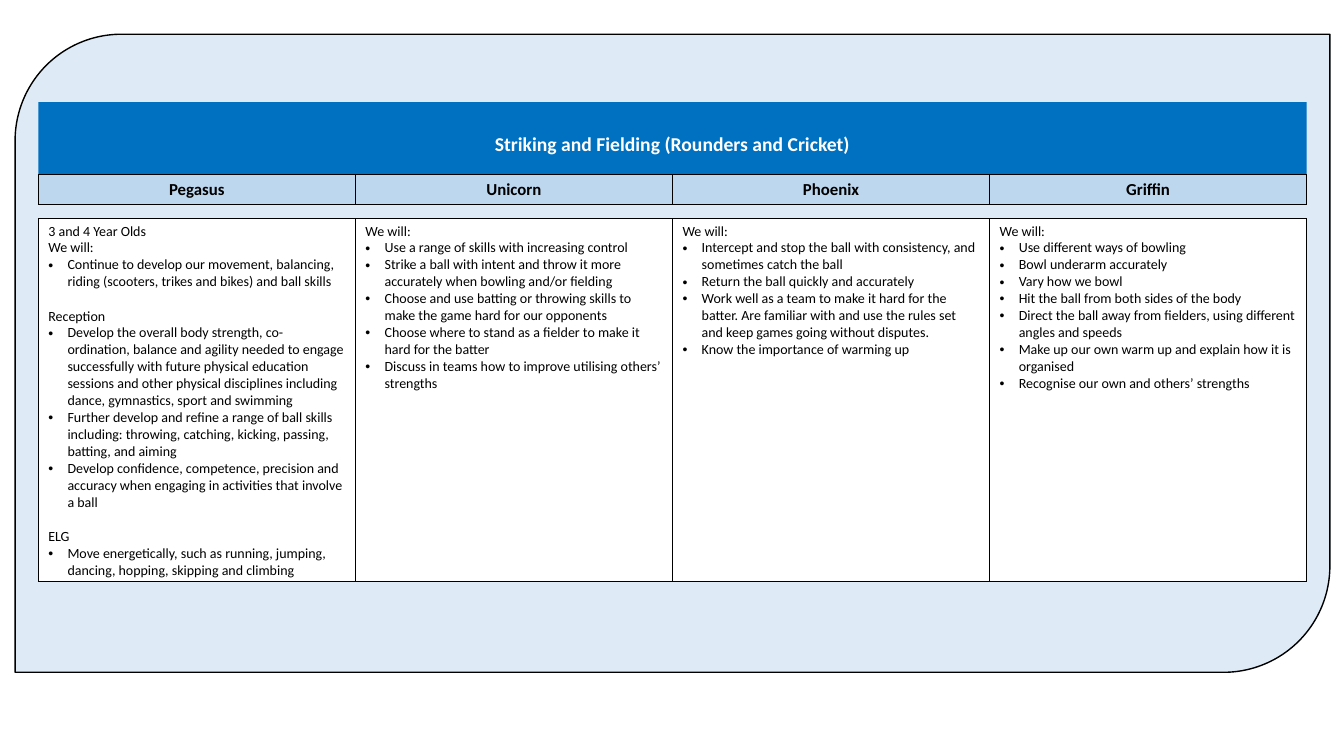
import pptx
import pptx.dml.color
import pptx.enum.shapes
import pptx.enum.text
import pptx.oxml
import pptx.oxml.ns
import pptx.util
from pptx.util import Inches, Pt

RGBColor = pptx.dml.color.RGBColor
BLACK = RGBColor(0x00, 0x00, 0x00)
WHITE = RGBColor(0xFF, 0xFF, 0xFF)
PALE_BLUE = RGBColor(0xDE, 0xEB, 0xF7)
LIGHT_BLUE = RGBColor(0xBD, 0xD7, 0xEE)
STRONG_BLUE = RGBColor(0x00, 0x70, 0xC0)

LEFT, WIDTH = Inches(0.38), Inches(12.58)

CLASSES = ["Pegasus", "Unicorn", "Phoenix", "Griffin"]

# Each class has sections: a list of heading lines and a list of bullets.
SKILLS = [
    [
        (["3 and 4 Year Olds", "We will:"], [
            "Continue to develop our movement, balancing, riding (scooters, trikes and bikes) and ball skills",
        ]),
        (["Reception"], [
            "Develop the overall body strength, co-ordination, balance and agility needed to engage "
            "successfully with future physical education sessions and other physical disciplines "
            "including dance, gymnastics, sport and swimming",
            "Further develop and refine a range of ball skills including: throwing, catching, kicking, "
            "passing, batting, and aiming",
            "Develop confidence, competence, precision and accuracy when engaging in activities that "
            "involve a ball",
        ]),
        (["ELG"], [
            "Move energetically, such as running, jumping, dancing, hopping, skipping and climbing",
        ]),
    ],
    [
        (["We will:"], [
            "Use a range of skills with increasing control",
            "Strike a ball with intent and throw it more accurately when bowling and/or fielding",
            "Choose and use batting or throwing skills to make the game hard for our opponents",
            "Choose where to stand as a fielder to make it hard for the batter",
            "Discuss in teams how to improve utilising others’ strengths",
        ]),
    ],
    [
        (["We will:"], [
            "Intercept and stop the ball with consistency, and sometimes catch the ball",
            "Return the ball quickly and accurately",
            "Work well as a team to make it hard for the batter. Are familiar with and use the rules "
            "set and keep games going without disputes.",
            "Know the importance of warming up",
        ]),
    ],
    [
        (["We will:"], [
            "Use different ways of bowling",
            "Bowl underarm accurately",
            "Vary how we bowl",
            "Hit the ball from both sides of the body",
            "Direct the ball away from fielders, using different angles and speeds",
            "Make up our own warm up and explain how it is organised",
            "Recognise our own and others’ strengths",
        ]),
    ],
]


class SkillsSlide:
    """Holds the slide and the text style its elements share."""

    font_name = "Calibri"
    bullet_indent = Inches(0.19)
    section_gap = Pt(12.2)

    def __init__(self, presentation):
        self.slide = presentation.slides.add_slide(presentation.slide_layouts[5])

    def style(self, paragraph, size, color=BLACK, bold=False, align=None):
        font = paragraph.font
        font.name, font.size, font.bold = self.font_name, Pt(size), bold
        font.color.rgb = color
        paragraph.alignment = align

    def add_panel(self):
        panel = self.slide.shapes.add_shape(
            pptx.enum.shapes.MSO_SHAPE.ROUND_2_DIAG_RECTANGLE,
            Inches(0.15), Inches(0.34), Inches(13.04), Inches(6.33))
        panel.shadow.inherit = False
        panel.fill.solid()
        panel.fill.fore_color.rgb = PALE_BLUE
        panel.line.color.rgb = BLACK
        panel.line.width = Pt(1)
        # The title placeholder has to lie in front of the panel.
        self.slide.shapes.title.element.addprevious(panel.element)

    def add_title(self, text):
        title = self.slide.shapes.title
        title.left, title.top, title.width, title.height = LEFT, Inches(1.26), WIDTH, Inches(0.34)
        title.fill.solid()
        title.fill.fore_color.rgb = STRONG_BLUE
        frame = title.text_frame
        frame.text = text
        frame.word_wrap = True
        frame.auto_size = pptx.enum.text.MSO_AUTO_SIZE.SHAPE_TO_FIT_TEXT
        self.style(frame.paragraphs[0], 14, WHITE, True, pptx.enum.text.PP_ALIGN.CENTER)

    def add_row(self, top, height, fill):
        """Add a one-row bordered table and return its cells."""
        table = self.slide.shapes.add_table(1, len(CLASSES), LEFT, top, WIDTH, height).table
        table.first_row = table.horz_banding = False
        cells = list(table.iter_cells())
        for cell in cells:
            self.add_borders(cell)
            cell.fill.solid()
            cell.fill.fore_color.rgb = fill
        return cells

    def add_borders(self, cell):
        properties = cell._tc.get_or_add_tcPr()
        for side in "LRTB":
            properties.append(pptx.oxml.parse_xml(
                f'<a:ln{side} {pptx.oxml.ns.nsdecls("a")} w="{Pt(0.5)}"><a:solidFill>'
                f'<a:srgbClr val="{BLACK}"/></a:solidFill></a:ln{side}>'))

    def add_class_names(self):
        for cell, name in zip(self.add_row(Inches(1.73), Inches(0.3), LIGHT_BLUE), CLASSES):
            cell.text = name
            self.style(cell.text_frame.paragraphs[0], 12, bold=True,
                       align=pptx.enum.text.PP_ALIGN.CENTER)

    def add_skills(self):
        for cell, sections in zip(self.add_row(Inches(2.17), Inches(3.6), WHITE), SKILLS):
            cell.margin_top, cell.margin_bottom = Inches(0.04), Inches(0.02)
            lines = [(text, is_bullet, number > 0 and index == 0 and not is_bullet)
                     for number, section in enumerate(sections)
                     for is_bullet, texts in enumerate(section)
                     for index, text in enumerate(texts)]
            frame = cell.text_frame
            frame.text = "\n".join(text for text, _, _ in lines)
            for paragraph, (_, is_bullet, starts_section) in zip(frame.paragraphs, lines):
                if is_bullet:
                    self.add_bullet(paragraph)
                if starts_section:
                    paragraph.space_before = self.section_gap
                self.style(paragraph, 10)

    def add_bullet(self, paragraph):
        properties = paragraph._p.get_or_add_pPr()
        properties.set("marL", str(self.bullet_indent))
        properties.set("indent", str(-self.bullet_indent))
        for tag in ('buFont typeface="Arial"', 'buChar char="•"'):
            name, attribute = tag.split(" ")
            properties.append(pptx.oxml.parse_xml(
                f'<a:{name} {pptx.oxml.ns.nsdecls("a")} {attribute}/>'))


def main():
    presentation = pptx.Presentation()
    presentation.slide_width, presentation.slide_height = Inches(13.33), Inches(7.5)
    skills_slide = SkillsSlide(presentation)
    skills_slide.add_panel()
    skills_slide.add_title("Striking and Fielding (Rounders and Cricket)")
    skills_slide.add_class_names()
    skills_slide.add_skills()
    presentation.save("out.pptx")


if __name__ == "__main__":
    main()
